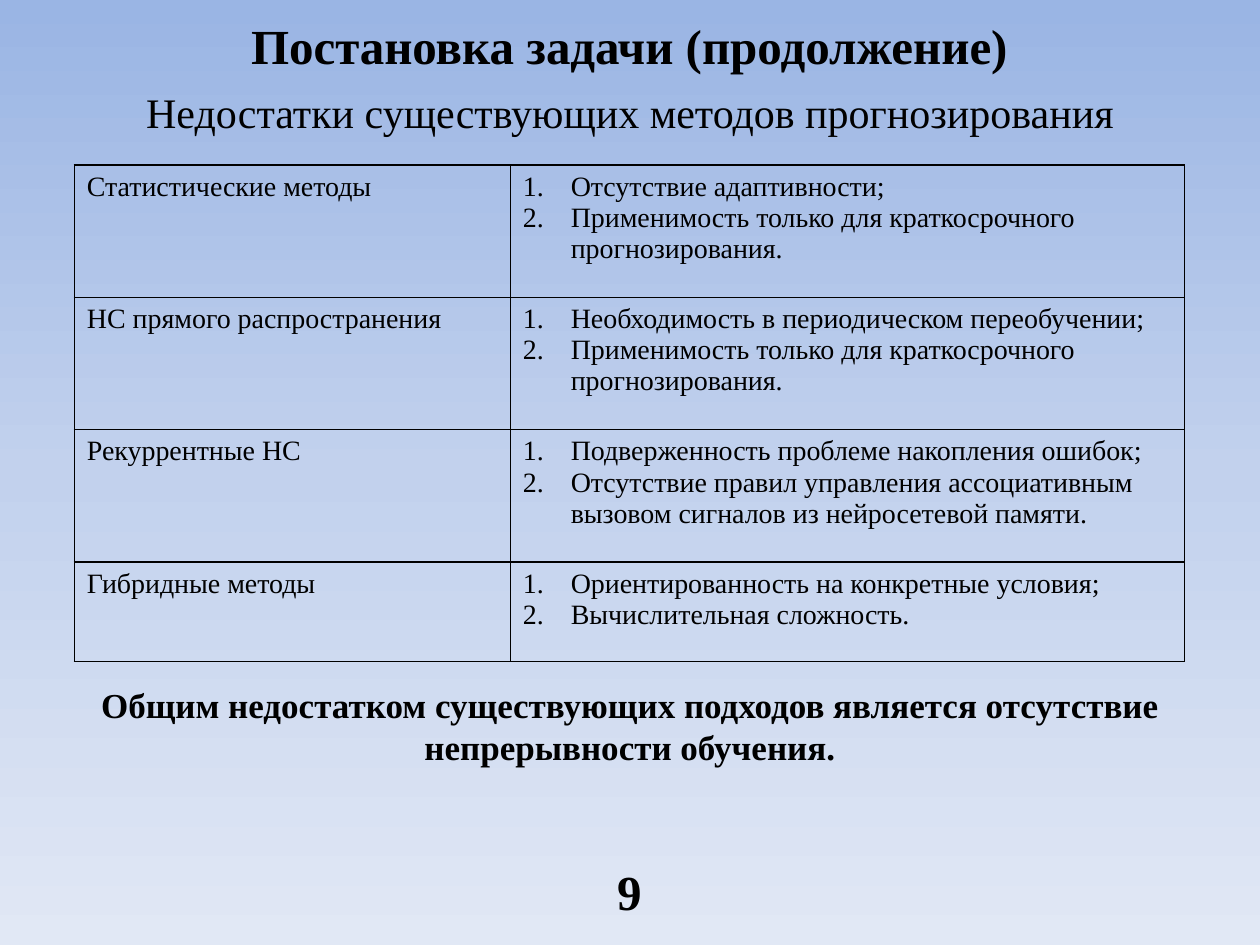
from copy import deepcopy

from lxml.etree import SubElement
from pptx import Presentation
from pptx.dml.color import RGBColor
from pptx.enum.text import MSO_ANCHOR, MSO_AUTO_SIZE, PP_ALIGN
from pptx.oxml import parse_xml
from pptx.oxml.ns import nsdecls, qn
from pptx.util import Inches, Pt

COLORS = {"text": "000000", "border": "000000",
          "sky": "9AB5E4", "haze": "C2D1ED", "pale": "E1E8F5"}
FONT = "Times New Roman"
TITLE_BOX = (0.31, 0, 9.37, 0.72)
SUBTITLE_BOX = (0.43, 0.52, 9.14, 0.73)
TABLE_BOX = (0.59, 1.31, 8.81, 3.94)
CONCLUSION_BOX = (0.43, 5.25, 9.14, 1.02)
NUMBER_BOX = (4.53, 6.64, 0.93, 0.86)
COLUMN_WIDTHS = (3.46, 5.35)
ROW_HEIGHTS = (1.05, 1.05, 1.05, 0.79)
METHODS = [
    ("Статистические методы",
     ["Отсутствие адаптивности;",
      "Применимость только для краткосрочного прогнозирования."]),
    ("НС прямого распространения",
     ["Необходимость в периодическом переобучении;",
      "Применимость только для краткосрочного прогнозирования."]),
    ("Рекуррентные НС",
     ["Подверженность проблеме накопления ошибок;",
      "Отсутствие правил управления ассоциативным вызовом сигналов "
      "из нейросетевой памяти."]),
    ("Гибридные методы",
     ["Ориентированность на конкретные условия;",
      "Вычислительная сложность."]),
]


def paint_background(slide):
    """Fill the slide with a vertical three-stop gradient."""
    fill = slide.background.fill
    fill.gradient()
    fill.gradient_angle = 270
    first, last = fill.gradient_stops
    first.position, last.position = 0, 1
    first.color.rgb = RGBColor.from_string(COLORS["haze"])
    last.color.rgb = RGBColor.from_string(COLORS["pale"])
    stops = slide.background._cSld.find(".//" + qn("a:gsLst"))
    middle = deepcopy(stops[0])
    middle.set("pos", "50000")
    stops.insert(1, middle)
    first.color.rgb = RGBColor.from_string(COLORS["sky"])


def add_run(paragraph, text, size, bold=False):
    """Add one formatted run to a paragraph."""
    run = paragraph.add_run()
    run.text = text
    run.font.name = FONT
    run.font.size = Pt(size)
    run.font.bold = bold
    run.font.color.rgb = RGBColor.from_string(COLORS["text"])


def place_line(shape, box, text, size, bold=False):
    """Place a text shape in its box with centred text."""
    shape.left, shape.top, shape.width, shape.height = map(Inches, box)
    frame = shape.text_frame
    frame.word_wrap = True
    frame.auto_size = MSO_AUTO_SIZE.NONE
    frame.vertical_anchor = MSO_ANCHOR.MIDDLE
    paragraph = frame.paragraphs[0]
    paragraph.alignment = PP_ALIGN.CENTER
    add_run(paragraph, text, size, bold)


def add_text(slide, box, text, size):
    """Add a bold centred text box."""
    shape = slide.shapes.add_textbox(*map(Inches, box))
    place_line(shape, box, text, size, bold=True)


def format_cell(cell):
    """Clear the cell fill and draw its four borders."""
    cell.fill.background()
    properties = cell._tc.get_or_add_tcPr()
    for index, side in enumerate(("lnL", "lnR", "lnT", "lnB")):
        properties.insert(index, parse_xml(
            f'<a:{side} {nsdecls("a")} w="{Pt(1)}"><a:solidFill>'
            f'<a:srgbClr val="{COLORS["border"]}"/></a:solidFill></a:{side}>'))


def write_numbered(frame, items):
    """Write the items as an automatically numbered list."""
    for index, item in enumerate(items):
        paragraph = frame.add_paragraph() if index else frame.paragraphs[0]
        properties = paragraph._p.get_or_add_pPr()
        properties.set("marL", str(Inches(0.38)))
        properties.set("indent", str(-Inches(0.38)))
        SubElement(properties, qn("a:buFont"), typeface="+mj-lt")
        SubElement(properties, qn("a:buAutoNum"), type="arabicPeriod")
        add_run(paragraph, item, 16)


def add_methods_table(slide, box):
    """Add the table of methods and their drawbacks."""
    table = slide.shapes.add_table(
        len(METHODS), len(COLUMN_WIDTHS), *map(Inches, box)).table
    table.first_row = table.horz_banding = False
    for column, width in zip(table.columns, COLUMN_WIDTHS):
        column.width = Inches(width)
    for row, height, (method, drawbacks) in zip(table.rows, ROW_HEIGHTS, METHODS):
        row.height = Inches(height)
        name_cell, drawback_cell = row.cells
        format_cell(name_cell)
        format_cell(drawback_cell)
        add_run(name_cell.text_frame.paragraphs[0], method, 16)
        write_numbered(drawback_cell.text_frame, drawbacks)


def main():
    """Build and save the slide."""
    presentation = Presentation()
    presentation.slide_width, presentation.slide_height = Inches(10), Inches(7.5)
    slide = presentation.slides.add_slide(presentation.slide_layouts[5])
    paint_background(slide)
    add_text(slide, NUMBER_BOX, "9", 28)
    place_line(slide.shapes.title, SUBTITLE_BOX,
               "Недостатки существующих методов прогнозирования", 24)
    add_methods_table(slide, TABLE_BOX)
    add_text(slide, TITLE_BOX, "Постановка задачи (продолжение)", 28)
    add_text(slide, CONCLUSION_BOX,
             "Общим недостатком существующих подходов является "
             "отсутствие непрерывности обучения.", 20)
    presentation.save("out.pptx")


if __name__ == "__main__":
    main()
